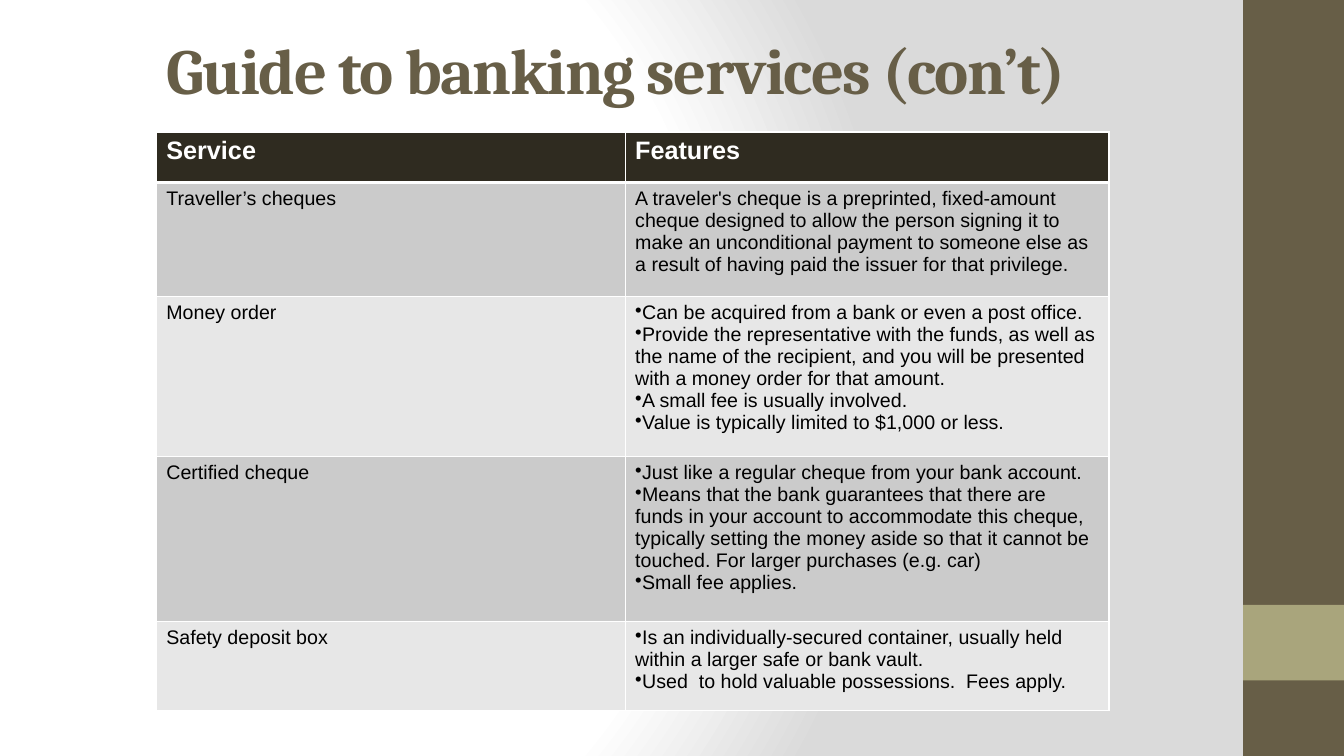
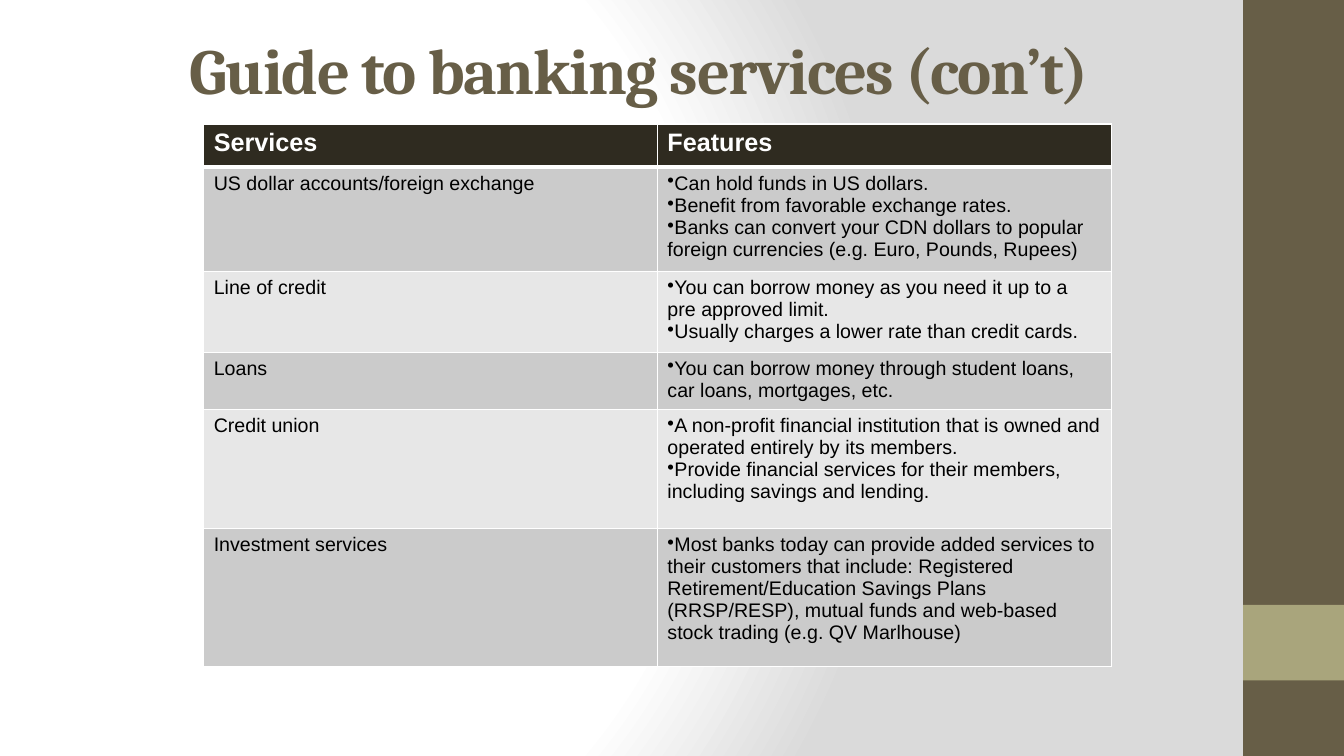
import dataclasses

import lxml.etree
import pptx
import pptx.dml.color
import pptx.enum.shapes
import pptx.enum.text
import pptx.oxml
import pptx.oxml.ns
import pptx.util

Inches = pptx.util.Inches
qn = pptx.oxml.ns.qn


@dataclasses.dataclass(frozen=True)
class Theme:
    # Colours
    brown: str = "675E47"
    olive: str = "A9A57C"
    dark: str = "2F2B20"
    white: str = "FFFFFF"
    black: str = "000000"
    glow: str = "DADADA"
    rows: tuple = ("CBCBCB", "E7E7E7")
    # Type
    serif: str = "Cambria"
    sans: str = "Arial"
    title: int = 46
    head: int = 18
    body: int = 14
    # Rules, in points
    thin: int = 1
    thick: int = 3


def rgb(code):
    return pptx.dml.color.RGBColor.from_string(code)


class Deck:
    def __init__(self, theme):
        self.theme = theme
        self.show = pptx.Presentation()
        self.show.slide_width = Inches(13.33)
        self.show.slide_height = Inches(7.5)
        self.slide = None

    def page(self):
        """Start a slide with the shared backdrop and side bands."""
        self.slide = self.show.slides.add_slide(self.show.slide_layouts[6])
        self.glow()
        self.band(0, 7.5, self.theme.brown)
        self.band(6, 0.75, self.theme.olive)

    def glow(self):
        stops = "".join(
            f'<a:gs pos="{pos * 1000}"><a:srgbClr val="{code}"/></a:gs>'
            for pos, code in ((0, self.theme.white), (75, self.theme.white),
                              (100, self.theme.glow)))
        back = pptx.oxml.parse_xml(
            f'<p:bg {pptx.oxml.ns.nsdecls("p", "a")}><p:bgPr>'
            f'<a:gradFill rotWithShape="1"><a:gsLst>{stops}</a:gsLst>'
            '<a:path path="circle"><a:fillToRect l="20000" t="50000" '
            'r="100000" b="50000"/></a:path></a:gradFill>'
            '<a:effectLst/></p:bgPr></p:bg>')
        self.slide._element.cSld.insert(0, back)

    def band(self, top, height, code):
        shape = self.slide.shapes.add_shape(
            pptx.enum.shapes.MSO_SHAPE.RECTANGLE,
            Inches(12.33), Inches(top), Inches(1), Inches(height))
        shape.shadow.inherit = False
        shape.fill.solid()
        shape.fill.fore_color.rgb = rgb(code)
        shape.line.fill.background()

    def style(self, para, face, size, code, bold):
        para.font.name = face
        para.font.size = pptx.util.Pt(size)
        para.font.color.rgb = rgb(code)
        para.font.bold = bold

    def title(self, text, left, width):
        box = self.slide.shapes.add_textbox(
            Inches(left), Inches(0.3), Inches(width), Inches(0.77))
        frame = box.text_frame
        frame.word_wrap = True
        frame.vertical_anchor = pptx.enum.text.MSO_ANCHOR.MIDDLE
        para = frame.paragraphs[0]
        para.text = text
        look = self.theme
        self.style(para, look.serif, look.title, look.brown, True)
        para._p.pPr.find(qn("a:defRPr")).set("spc", "-100")

    def table(self, left, top, cols, highs, rows):
        grid = self.slide.shapes.add_table(
            len(rows), len(cols), Inches(left), Inches(top),
            Inches(sum(cols)), Inches(sum(highs))).table
        for col, width in zip(grid.columns, cols):
            col.width = Inches(width)
        for row, high in zip(grid.rows, highs):
            row.height = Inches(high)
        for r, row in enumerate(rows):
            for c, text in enumerate(row):
                self.cell(grid.cell(r, c), text, r)

    def cell(self, cell, text, row):
        """Fill one cell; a list of texts becomes bullets."""
        look = self.theme
        fill = look.rows[(row - 1) % 2] if row else look.dark
        cell.fill.solid()
        cell.fill.fore_color.rgb = rgb(fill)
        self.edges(cell, row)
        points = isinstance(text, list)
        lines = text if points else [text]
        cell.text = "\n".join(lines)
        for para in cell.text_frame.paragraphs:
            if row:
                self.style(para, look.sans, look.body, look.black, False)
            else:
                self.style(para, look.sans, look.head, look.white, True)
            if points:
                mark = lxml.etree.Element(qn("a:buChar"), char="•")
                para._p.pPr.insert(0, mark)

    def edges(self, cell, row):
        # The rule under the header row is the thick one
        look = self.theme
        sizes = {"L": look.thin, "R": look.thin,
                 "T": look.thick if row == 1 else look.thin,
                 "B": look.thick if row == 0 else look.thin}
        props = cell._tc.get_or_add_tcPr()
        for spot, (side, size) in enumerate(sizes.items()):
            line = lxml.etree.Element(
                qn(f"a:ln{side}"), w=str(int(pptx.util.Pt(size))))
            fill = lxml.etree.SubElement(line, qn("a:solidFill"))
            lxml.etree.SubElement(fill, qn("a:srgbClr"), val=look.white)
            props.insert(spot, line)


TITLE = "Guide to banking services (con’t)"

PAPERS = [
    ("Service", "Features"),
    ("Traveller’s cheques",
     "A traveler's cheque is a preprinted, fixed-amount cheque designed to "
     "allow the person signing it to make an unconditional payment to "
     "someone else as a result of having paid the issuer for that "
     "privilege."),
    ("Money order", [
        "Can be acquired from a bank or even a post office.",
        "Provide the representative with the funds, as well as the name of "
        "the recipient, and you will be presented with a money order for "
        "that amount.",
        "A small fee is usually involved.",
        "Value is typically limited to $1,000 or less."]),
    ("Certified cheque", [
        "Just like a regular cheque from your bank account.",
        "Means that the bank guarantees that there are funds in your account "
        "to accommodate this cheque, typically setting the money aside so "
        "that it cannot be touched. For larger purchases (e.g. car)",
        "Small fee applies."]),
    ("Safety deposit box", [
        "Is an individually-secured container, usually held within a larger "
        "safe or bank vault.",
        "Used  to hold valuable possessions.  Fees apply."]),
]

CREDIT = [
    ("Services", "Features"),
    ("US dollar accounts/foreign exchange", [
        "Can hold funds in US dollars.",
        "Benefit from favorable exchange rates.",
        "Banks can convert your CDN dollars to popular foreign currencies "
        "(e.g. Euro, Pounds, Rupees)"]),
    ("Line of credit", [
        "You can borrow money as you need it up to a pre approved limit.",
        "Usually charges a lower rate than credit cards."]),
    ("Loans", [
        "You can borrow money through student loans, car loans, mortgages, "
        "etc."]),
    ("Credit union", [
        "A non-profit financial institution that is owned and operated "
        "entirely by its members.",
        "Provide financial services for their members, including savings and "
        "lending."]),
    ("Investment services", [
        "Most banks today can provide added services to their customers that "
        "include: Registered Retirement/Education Savings Plans (RRSP/RESP), "
        "mutual funds and web-based stock trading (e.g. QV Marlhouse)"]),
]


def main():
    deck = Deck(Theme())

    # Cheques, orders and safe keeping
    deck.page()
    deck.title(TITLE, 1.55, 9.62)
    deck.table(1.55, 1.31, (4.65, 4.8), (0.5, 1.13, 1.59, 1.64, 0.88), PAPERS)

    # Accounts, credit and investing
    deck.page()
    deck.title(TITLE, 1.78, 9.38)
    deck.table(2.02, 1.23, (4.5, 4.5),
               (0.43, 0.97, 0.78, 0.57, 1.18, 1.37), CREDIT)

    deck.show.save("out.pptx")


if __name__ == "__main__":
    main()
